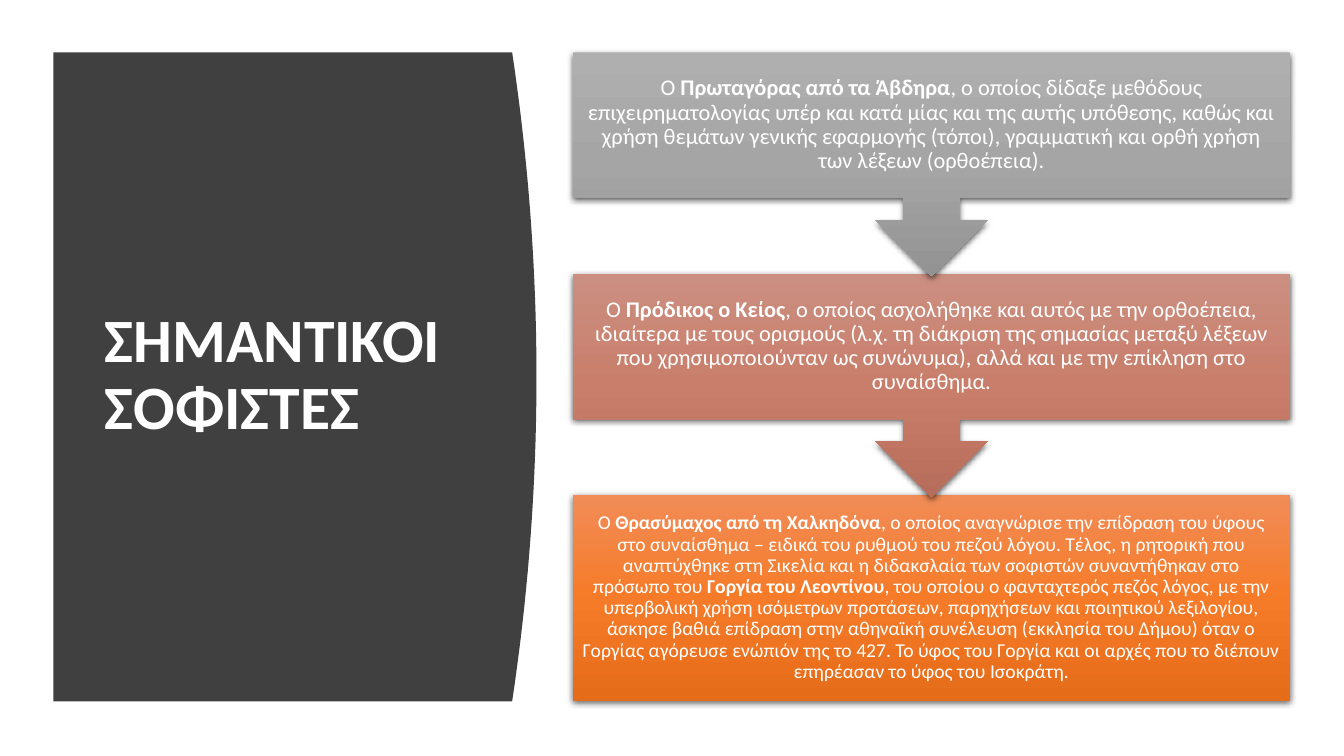
from lxml import etree
from pptx import Presentation
from pptx.dml.color import RGBColor
from pptx.enum.shapes import MSO_SHAPE as Kind
from pptx.enum.text import MSO_ANCHOR as Anchor, PP_ALIGN as Align
from pptx.oxml import parse_xml
from pptx.util import Pt

WHITE = RGBColor(0xFF, 0xFF, 0xFF)
DARK = RGBColor(0x40, 0x40, 0x40)
GREYS = [RGBColor(0xAF, 0xAF, 0xAF), RGBColor(0xA5, 0xA5, 0xA5), RGBColor(0x93, 0x93, 0x93)]
ROSES = [RGBColor(0xCB, 0x8F, 0x81), RGBColor(0xC9, 0x7E, 0x6B), RGBColor(0xB7, 0x6D, 0x5B)]
ORANGES = [RGBColor(0xF1, 0x8C, 0x57), RGBColor(0xF6, 0x7B, 0x28), RGBColor(0xE5, 0x6C, 0x19)]

TITLE = "ΣΗΜΑΝΤΙΚΟΙ ΣΟΦΙΣΤΕΣ"
SOPHISTS = [
    (GREYS, 16, [
        ("Ο", False), (" Πρωταγόρας από τα Άβδηρα", True),
        (", ο οποίος δίδαξε μεθόδους επιχειρηματολογίας υπέρ και κατά μίας και της "
         "αυτής υπόθεσης, καθώς και χρήση θεμάτων γενικής εφαρμογής (τόποι), γραμματική "
         "και ορθή χρήση των λέξεων (ορθοέπεια).", False)]),
    (ROSES, 16, [
        ("Ο ", False), ("Πρόδικος ο Κείος", True),
        (", ο οποίος ασχολήθηκε και αυτός με την ορθοέπεια, ιδιαίτερα με τους ορισμούς "
         "(λ.χ. τη διάκριση της σημασίας μεταξύ λέξεων που χρησιμοποιούνταν ως συνώνυμα), "
         "αλλά και με την επίκληση στο συναίσθημα.", False)]),
    (ORANGES, 14, [
        ("Ο ", False), ("Θρασύμαχος από τη Χαλκηδόνα", True),
        (", ο οποίος αναγνώρισε την επίδραση του ύφους στο συναίσθημα – ειδικά του ρυθμού "
         "του πεζού λόγου. Τέλος, η ρητορική που αναπτύχθηκε στη Σικελία και η διδακσλαία "
         "των σοφιστών συναντήθηκαν στο πρόσωπο του ", False),
        ("Γοργία του Λεοντίνου", True),
        (", του οποίου ο φανταχτερός πεζός λόγος, με την υπερβολική χρήση ισόμετρων "
         "προτάσεων, παρηχήσεων και ποιητικού λεξιλογίου, άσκησε βαθιά επίδραση στην "
         "αθηναϊκή συνέλευση (εκκλησία του Δήμου) όταν ο Γοργίας αγόρευσε ενώπιόν της το "
         "427. Το ύφος του Γοργία και οι αρχές που το διέπουν επηρέασαν το ύφος του "
         "Ισοκράτη.", False)]),
]

LEFT, TOP, EDGE, BULGE, BASE = 38.2, 37.4, 365.8, 17.4, 501.1
BOX_X, BOX_W, PITCH = 409, 512.6, 158.1
ARROW_H, TEXT_H, LAST_H = 159.8, 103.7, 146.9
STEPS = 40
NS = "http://schemas.openxmlformats.org/drawingml/2006/main"

deck = Presentation()
deck.slide_width, deck.slide_height = Pt(960), Pt(540)
slide = deck.slides.add_slide(deck.slide_layouts[6])
shapes = slide.shapes


def shade(shape, tones):
    shape.line.fill.background()
    stops = "".join(f'<a:gs pos="{50000 * i}"><a:srgbClr val="{tone}"/></a:gs>'
                    for i, tone in enumerate(tones))
    props = shape.fill._xPr
    old = props.find(f"{{{NS}}}ln")
    old.addprevious(parse_xml(
        f'<a:gradFill xmlns:a="{NS}" rotWithShape="0"><a:gsLst>{stops}</a:gsLst>'
        '<a:lin ang="5400000" scaled="0"/></a:gradFill>'))
    old.addnext(parse_xml(
        f'<a:effectLst xmlns:a="{NS}"><a:outerShdw blurRad="{Pt(4.5)}" dist="{Pt(1.5)}" '
        'dir="5400000" algn="ctr" rotWithShape="0"><a:srgbClr val="000000">'
        '<a:alpha val="63000"/></a:srgbClr></a:outerShdw></a:effectLst>'))


def write(spot, parts, size, align, pad):
    frame = shapes.add_textbox(*map(Pt, spot)).text_frame
    frame.word_wrap = True
    frame.vertical_anchor = Anchor.MIDDLE
    frame.margin_left = frame.margin_right = Pt(pad)
    frame.margin_top = frame.margin_bottom = Pt(pad)
    para = frame.paragraphs[0]
    para.alignment, para.line_spacing = align, 0.9
    for text, bold in parts:
        run = para.add_run()
        run.text = text
        font = run.font
        font.name, font.size, font.bold = "Calibri", Pt(size), bold
        font.color.rgb = WHITE


mid, half = (TOP + BASE) / 2, (BASE - TOP) / 2
curve = []
for i in range(STEPS + 1):
    t = 2 * i / STEPS - 1
    curve.append((Pt(EDGE + BULGE * (1 - t * t)), Pt(mid + half * t)))
pen = shapes.build_freeform(Pt(LEFT), Pt(TOP))
pen.add_line_segments(curve + [(Pt(LEFT), Pt(BASE))], close=True)
panel = pen.convert_to_shape()
panel.shadow.inherit = False
panel.fill.solid()
panel.fill.fore_color.rgb = DARK
panel.line.fill.background()
write((67.7, 79.9, 269.3, 377.3), [(TITLE, True)], 44, Align.LEFT, 7.2)

last = len(SOPHISTS) - 1
for i, (tones, size, parts) in reversed(list(enumerate(SOPHISTS))):
    y = TOP + i * PITCH
    kind, tall, text_h = ((Kind.RECTANGLE, LAST_H, LAST_H) if i == last
                          else (Kind.UP_ARROW_CALLOUT, ARROW_H, TEXT_H))
    box = shapes.add_shape(kind, Pt(BOX_X), Pt(y), Pt(BOX_W), Pt(tall))
    box.rotation = 0 if i == last else 180
    shade(box, tones)
    write((BOX_X, y, BOX_W, text_h), parts, size, Align.CENTER, size / 2)

deck.save("out.pptx")
